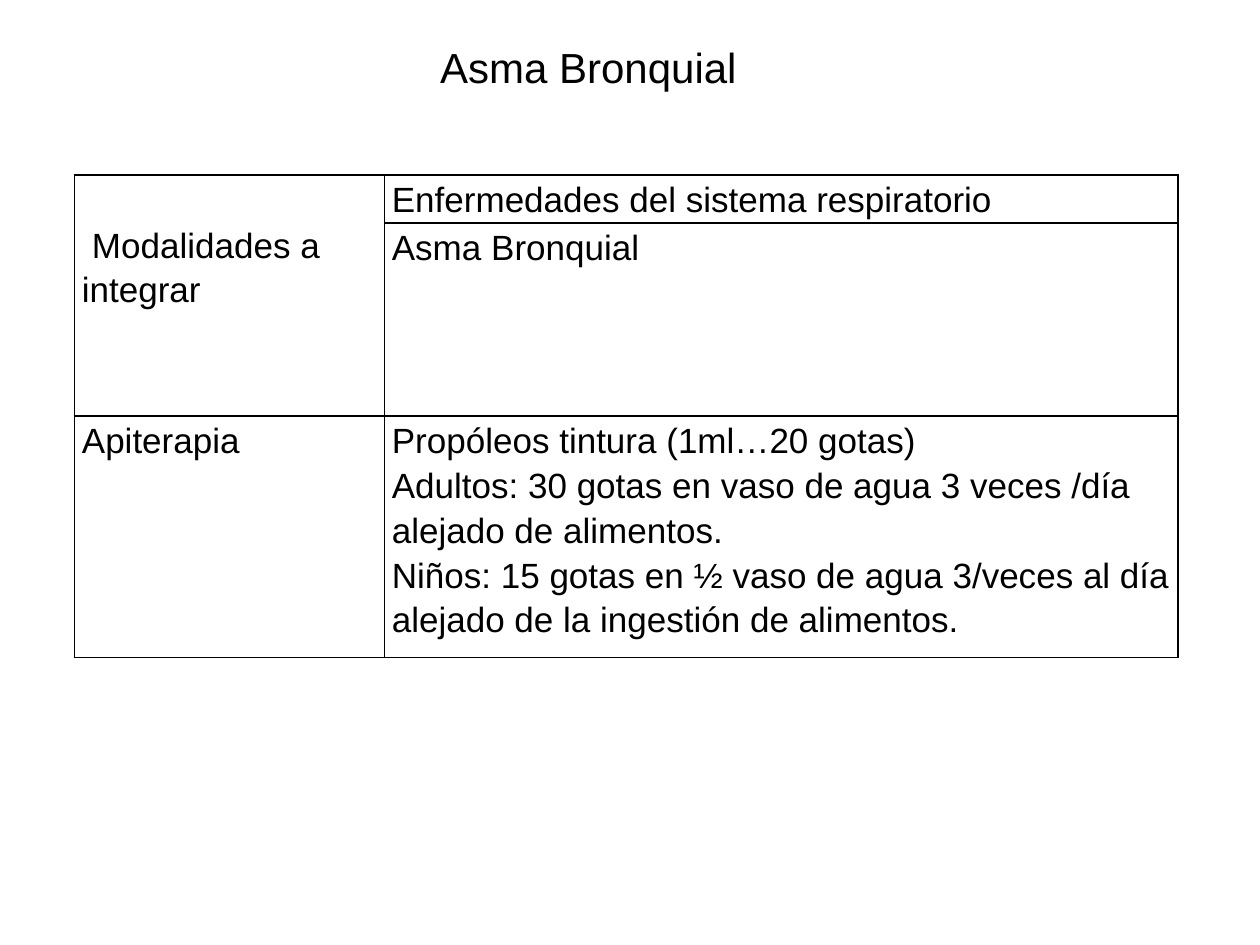
import pptx
import pptx.util
import pptx.dml.color
import pptx.enum.text
import lxml.etree
from pptx.util import Inches

INK = "000000"
PAPER = "FFFFFF"
EDGES = ("a:lnL", "a:lnR", "a:lnT", "a:lnB")


def color(code):
    return pptx.dml.color.RGBColor.from_string(code)


def style(part, size, space):
    for run in part.runs:
        run.font.name = "Arial"
        run.font.size = pptx.util.Pt(size)
        run.font.color.rgb = color(INK)
    part.line_spacing = space


def border(cell):
    props = cell._tc.get_or_add_tcPr()
    for edge in EDGES:
        line = lxml.etree.SubElement(props, pptx.oxml.ns.qn(edge), w="12700")
        fill = lxml.etree.SubElement(line, pptx.oxml.ns.qn("a:solidFill"))
        lxml.etree.SubElement(fill, pptx.oxml.ns.qn("a:srgbClr"), val=INK)


def add_title(slide, box, text):
    title = slide.shapes.title
    title.left, title.top, title.width, title.height = map(Inches, box)
    frame = title.text_frame
    frame.text = text
    frame.word_wrap = True
    frame.auto_size = pptx.enum.text.MSO_AUTO_SIZE.NONE
    frame.vertical_anchor = pptx.enum.text.MSO_ANCHOR.MIDDLE
    para = frame.paragraphs[0]
    para.alignment = pptx.enum.text.PP_ALIGN.CENTER
    style(para, 24, 0.9)


def add_grid(slide, box, cols, rows, texts):
    frame = slide.shapes.add_table(len(rows), len(cols), *map(Inches, box))
    table = frame.table
    table.first_row = False
    table.horz_banding = False
    for col, width in zip(table.columns, cols):
        col.width = Inches(width)
    for row, height in zip(table.rows, rows):
        row.height = Inches(height)
    for row, line in zip(table.rows, texts):
        for cell, text in zip(row.cells, line):
            cell.margin_left = cell.margin_right = Inches(0.06)
            cell.margin_top = cell.margin_bottom = 0
            border(cell)
            cell.fill.solid()
            cell.fill.fore_color.rgb = color(PAPER)
            cell.text_frame.text = text
            for para in cell.text_frame.paragraphs:
                style(para, 20, 1.15)
    head = table.cell(0, 0)
    head.merge(table.cell(1, 0))
    head.margin_top = Inches(0.36)
    props = head.text_frame.paragraphs[0]._p.get_or_add_pPr()
    props.set("indent", str(Inches(0.08)))


def main():
    deck = pptx.Presentation()
    deck.slide_width, deck.slide_height = Inches(10), Inches(7.5)
    slide = deck.slides.add_slide(deck.slide_layouts[5])
    dose = "\n".join((
        "Propóleos tintura (1ml…20 gotas)",
        "Adultos: 30 gotas en vaso de agua 3 veces /día alejado de alimentos.",
        "Niños: 15 gotas en ½ vaso de agua 3/veces al día "
        "alejado de la ingestión de alimentos.",
    ))
    texts = (
        ("Modalidades a integrar", "Enfermedades del sistema respiratorio"),
        ("", "Asma Bronquial"),
        ("Apiterapia", dose),
    )
    cols, rows = (2.46, 6.3), (0.38, 1.53, 1.92)
    add_grid(slide, (0.59, 1.39, sum(cols), sum(rows)), cols, rows, texts)
    add_title(slide, (2.92, 0.33, 3.5, 0.45), "Asma Bronquial")
    deck.save("out.pptx")


if __name__ == "__main__":
    main()
